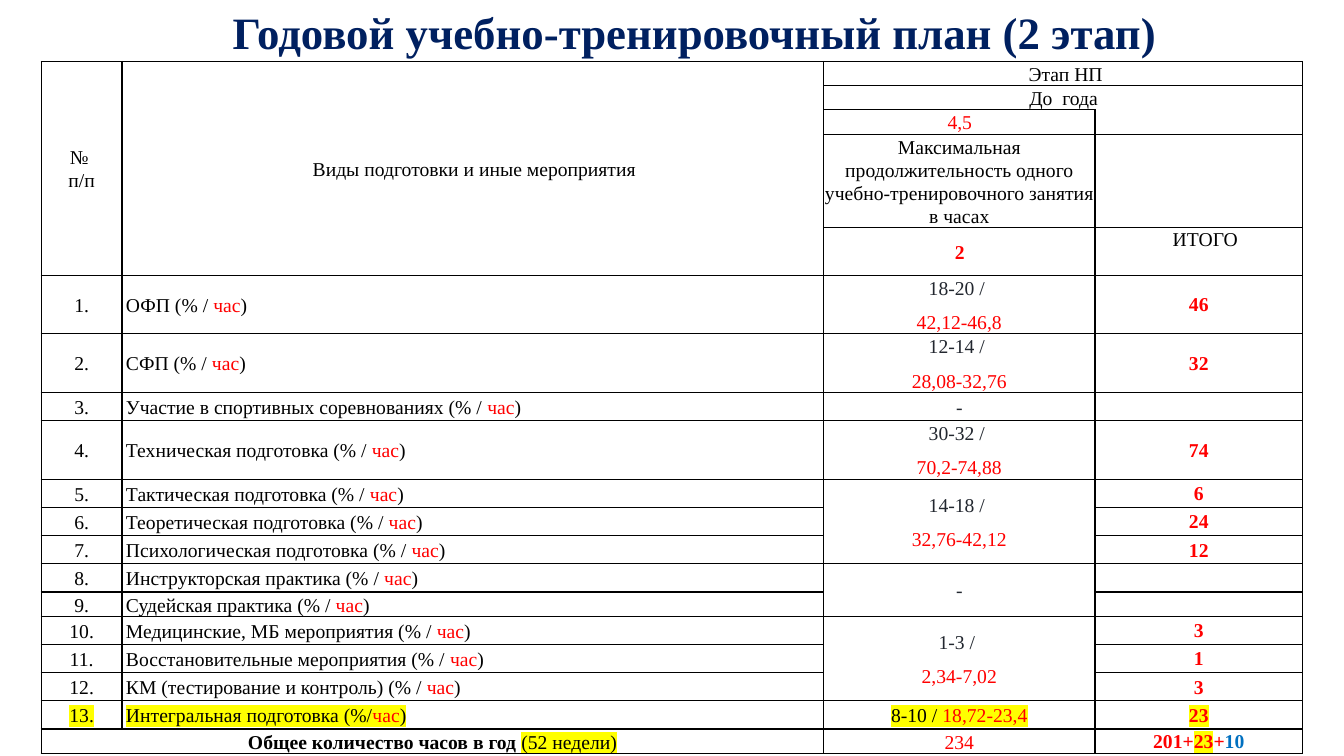
from lxml import etree
from pptx import Presentation, util as u
from pptx.dml import color
from pptx.enum import text
from pptx.oxml import ns

BLACK, RED, NAVY, BLUE, DARK, YELLOW = "000000", "FF0000", "002060", "0070C0", "22272F", "FFFF00"
FONT = "Times New Roman"
CENTER = text.PP_ALIGN.CENTER
MIDDLE = text.MSO_ANCHOR.MIDDLE

COLUMNS = [0.8, 6.96, 2.69, 2.06]
ROWS = [0.24, 0.23, 0.23, 0.93, 0.46, 0.58, 0.58, 0.28, 0.58] + [0.28] * 4 + [0.23] + [0.28] * 4 + [0.23]
MERGES = [
    (0, 0, 4, 0), (0, 1, 4, 1), (0, 2, 0, 3), (1, 2, 1, 3),
    (9, 2, 11, 2), (12, 2, 13, 2), (14, 2, 16, 2), (18, 0, 18, 1),
]
OPEN_EDGES = {(1, 2): "B", (1, 3): "B", (2, 3): "T"}
FIRST_ACTIVITY = 5
ACTIVITIES = [
    ("ОФП (% / ", ("18-20 / ", "42,12-46,8"), "46"),
    ("СФП (% / ", ("12-14 / ", "28,08-32,76"), "32"),
    ("Участие в спортивных соревнованиях (% / ", ("-",), ""),
    ("Техническая подготовка (% / ", ("30-32 / ", "70,2-74,88"), "74"),
    ("Тактическая подготовка (% / ", ("14-18 / ", "32,76-42,12"), "6"),
    ("Теоретическая подготовка (% / ", (), "24"),
    ("Психологическая подготовка (% / ", (), "12"),
    ("Инструкторская практика (% / ", ("-",), ""),
    ("Судейская практика (% / ", (), ""),
    ("Медицинские, МБ мероприятия (% / ", ("1-3 / ", "2,34-7,02"), "3"),
    ("Восстановительные мероприятия (% / ", (), "1"),
    ("КМ (тестирование и контроль) (% / ", (), "3"),
    ("Интегральная подготовка (%/", (), "23"),
]


def rgb(value):
    """Turn a hex string into a colour."""
    return color.RGBColor.from_string(value)


def apply(target, values):
    """Set each named attribute on the target."""
    for name, value in values.items():
        setattr(target, name, value)


def add_solid(parent, value):
    """Append a solid fill to an XML element."""
    fill = etree.SubElement(parent, ns.qn("a:solidFill"))
    etree.SubElement(fill, ns.qn("a:srgbClr"), val=value)


def add_span(para, words, hue=BLACK, bold=False, mark=None, size=14):
    """Add one formatted run, with an optional highlight."""
    span = para.add_run()
    span.text = words
    span.font.color.rgb = rgb(hue)
    apply(span.font, {"name": FONT, "size": u.Pt(size), "bold": bold})
    if mark:
        highlight = etree.Element(ns.qn("a:highlight"))
        etree.SubElement(highlight, ns.qn("a:srgbClr"), val=mark)
        span.font._element.find(ns.qn("a:solidFill")).addnext(highlight)


def format_para(para, align, indent=(0, 0), after=8):
    """Set alignment, spacing, left margin and first-line indent."""
    apply(para, {"alignment": align, "line_spacing": 1.07, "space_before": u.Pt(0), "space_after": u.Pt(after)})
    properties = para._p.get_or_add_pPr()
    for name, length in zip(("marL", "indent"), indent):
        properties.set(name, str(u.Inches(length)))


def write_cell(cell, *lines, align=CENTER, indent=(0, 0)):
    """Write paragraphs, each a list of spans, into a cell."""
    for number, spans in enumerate(lines):
        para = cell.text_frame.add_paragraph() if number else cell.text_frame.paragraphs[0]
        format_para(para, align, indent)
        for position, span in enumerate(spans):
            if span == "\n":
                para.add_line_break()
            else:
                add_span(para, *span)


def style_cell(cell, open_edge, margin):
    """Give a cell its borders, margins and text size when empty."""
    properties = cell._tc.get_or_add_tcPr()
    for edge in "LRTB":
        line = etree.SubElement(properties, ns.qn("a:ln" + edge), w=str(u.Pt(1)))
        if edge == open_edge:
            etree.SubElement(line, ns.qn("a:noFill"))
        else:
            add_solid(line, BLACK)
    cell.fill.background()
    side = u.Inches(margin)
    apply(cell, {"margin_left": side, "margin_right": side, "margin_top": side,
                 "margin_bottom": 0, "vertical_anchor": MIDDLE})
    para = cell.text_frame.paragraphs[0]
    if not para.runs:
        etree.SubElement(para._p, ns.qn("a:endParaRPr"), sz="1400")


def write_header(table):
    """Write the column headings."""
    write_cell(table.cell(0, 0), [("№ ",), "\n", ("п/п",)])
    write_cell(table.cell(0, 1), [("Виды подготовки и иные мероприятия",)], indent=(0.03, 0))
    write_cell(table.cell(0, 2), [("Этап НП",)], indent=(0.1, -0.05))
    write_cell(table.cell(1, 2), [("До\u00a0 года".replace("\u00a0", " "),)], indent=(0, 0.01))
    write_cell(table.cell(2, 2), [("4,5", RED)], indent=(0, 0.01))
    write_cell(table.cell(3, 2), [(
        "Максимальная продолжительность одного учебно-тренировочного занятия в часах",)])
    write_cell(table.cell(4, 2), [("2", RED, True)], indent=(0, 0.01))
    write_cell(table.cell(4, 3), [("ИТОГО",)], indent=(0.21, -0.08))


def write_activities(table):
    """Write the numbered activities; the last one is highlighted."""
    for number, (name, hours, total) in enumerate(ACTIVITIES, 1):
        row = FIRST_ACTIVITY + number - 1
        mark = YELLOW if number == len(ACTIVITIES) else None
        write_cell(table.cell(row, 0), [(f"{number}.", BLACK, False, mark)], indent=(0.03, -0.03))
        label = [(name, BLACK, False, mark), ("час", RED, False, mark), (")", BLACK, False, mark)]
        write_cell(table.cell(row, 1), label, align=text.PP_ALIGN.LEFT, indent=(0.03, 0))
        write_cell(table.cell(row, 2), *[[(words, hue)] for words, hue in zip(hours, (DARK, RED))])
        if total:
            write_cell(table.cell(row, 3), [(total, RED, True, mark)])
    write_cell(table.cell(row, 2), [("8-10 / ", BLACK, False, YELLOW), ("18,72-23,4", RED, False, YELLOW)])


def write_totals(table):
    """Write the closing row with the yearly hours."""
    row = len(ROWS) - 1
    write_cell(table.cell(row, 0), [("Общее количество часов в год ", BLACK, True),
                                    ("(52 недели)", BLACK, False, YELLOW)], indent=(0.03, -0.03))
    write_cell(table.cell(row, 2), [("234", RED)])
    write_cell(table.cell(row, 3), [("201+", RED, True), ("23", RED, True, YELLOW),
                                    ("+", RED, True), ("10", BLUE, True)])


def add_title(page, left, top, width, height):
    """Place and format the title."""
    box = page.shapes.title
    apply(box, {"left": u.Inches(left), "top": u.Inches(top), "width": u.Inches(width), "height": u.Inches(height)})
    apply(box.text_frame, {"margin_left": 0, "margin_right": 0, "margin_top": 0, "margin_bottom": 0,
                           "vertical_anchor": MIDDLE, "word_wrap": True, "auto_size": text.MSO_AUTO_SIZE.NONE})
    para = box.text_frame.paragraphs[0]
    format_para(para, CENTER, (0, 0.49), 0)
    add_span(para, "Годовой учебно-тренировочный план (2 этап) ", NAVY, True, size=32)


def add_plan(page, left, top):
    """Build the training plan table from its top-left corner."""
    frame = page.shapes.add_table(len(ROWS), len(COLUMNS), u.Inches(left), u.Inches(top),
                                  u.Inches(sum(COLUMNS)), u.Inches(sum(ROWS)))
    table = frame.table
    apply(table, {"first_row": False, "horz_banding": False})
    for column, width in zip(table.columns, COLUMNS):
        column.width = u.Inches(width)
    for row, height in zip(table.rows, ROWS):
        row.height = u.Inches(height)
    for first_row, first_column, last_row, last_column in MERGES:
        table.cell(first_row, first_column).merge(table.cell(last_row, last_column))
    write_header(table)
    write_activities(table)
    write_totals(table)
    for row in range(len(ROWS)):
        for column in range(len(COLUMNS)):
            style_cell(table.cell(row, column), OPEN_EDGES.get((row, column)), 0 if column == 3 else 0.01)
    table.cell(4, 3).vertical_anchor = text.MSO_ANCHOR.TOP


def main():
    """Build the slide and save it."""
    deck = Presentation()
    apply(deck, {"slide_width": u.Inches(13.33), "slide_height": u.Inches(7.5)})
    page = deck.slides.add_slide(deck.slide_layouts[5])
    add_title(page, 0.95, -0.02, 11.5, 0.63)
    add_plan(page, 0.41, 0.61)
    deck.save("out.pptx")


if __name__ == "__main__":
    main()
